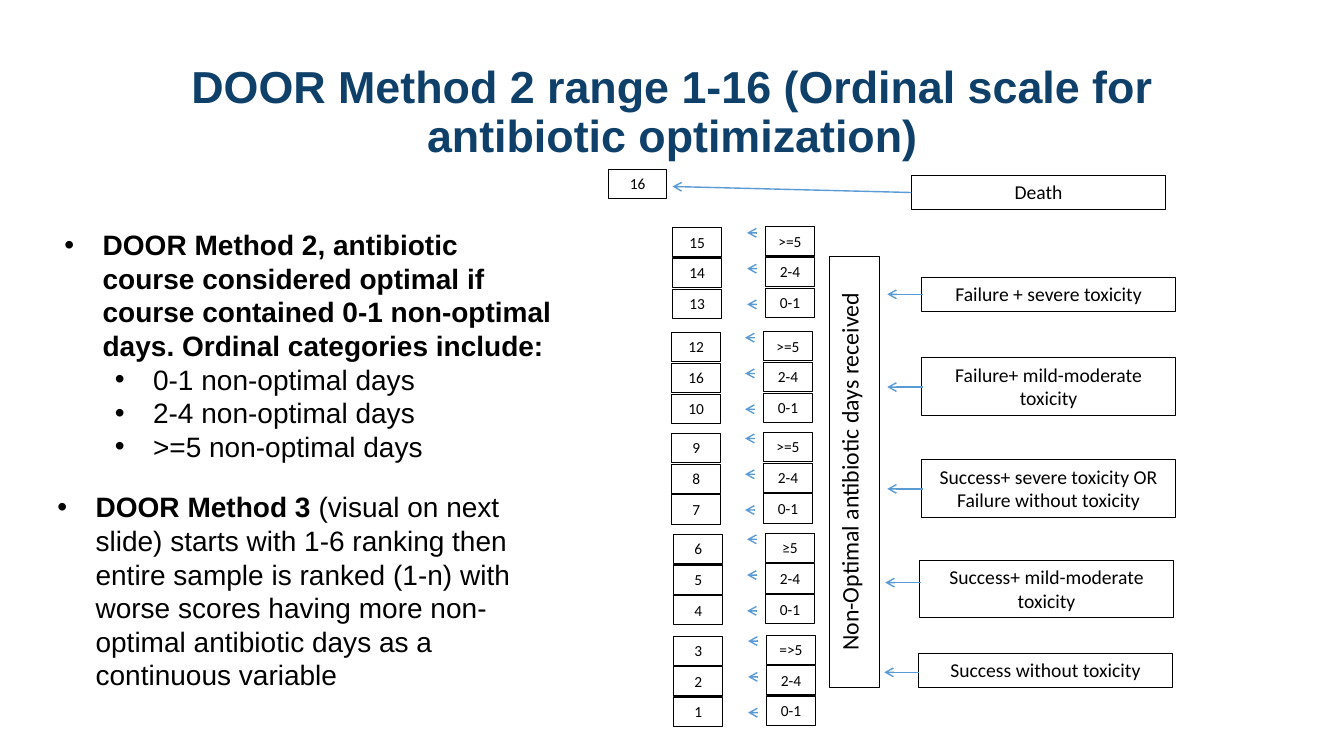
from dataclasses import dataclass

import lxml.etree
import pptx
import pptx.dml.color
import pptx.enum.shapes
import pptx.enum.text
import pptx.oxml.ns
import pptx.shapes.autoshape
import pptx.slide
import pptx.text.text
import pptx.util

Inches = pptx.util.Inches
qn = pptx.oxml.ns.qn
RGB = pptx.dml.color.RGBColor.from_string
ALIGN = pptx.enum.text.PP_ALIGN
ANCHOR = pptx.enum.text.MSO_ANCHOR


@dataclass(frozen=True)
class Theme:
    title: str = "0F406A"
    ink: str = "000000"
    arrow: str = "5B9BD5"
    text_font: str = "Arial"
    box_font: str = "Calibri"
    title_size: int = 32
    body_size: int = 20
    axis_size: int = 17
    outcome_size: int = 14
    cell_size: int = 11


@dataclass(frozen=True)
class Outcome:
    text: str
    left: float
    top: float
    height: float
    arrow_y: float


@dataclass(frozen=True)
class RankGroup:
    """Three ranks, worst first, each beside its range of non-optimal days."""
    ranks: tuple[str, str, str]
    worst_days: str
    rank_left: float
    days_left: float
    top: float


@dataclass(frozen=True)
class Bullet:
    bold: str
    plain: str = ""
    level: int = 0


THEME = Theme()
CELL_W, CELL_H, CELL_STEP = 0.49, 0.29, 0.305
OUTCOME_W = 2.52

OUTCOMES = [
    Outcome("Failure + severe toxicity", 9.14, 2.75, 0.34, 2.92),
    Outcome("Failure+ mild-moderate toxicity", 9.14, 3.55, 0.57, 3.84),
    Outcome("Success+ severe toxicity OR\nFailure without toxicity", 9.14, 4.56, 0.57, 4.85),
    Outcome("Success+ mild-moderate toxicity", 9.12, 5.56, 0.57, 5.78),
    Outcome("Success without toxicity", 9.11, 6.48, 0.34, 6.67),
]
RANK_GROUPS = [
    RankGroup(("15", "14", "13"), ">=5", 6.67, 7.59, 2.25),
    RankGroup(("12", "16", "10"), ">=5", 6.66, 7.57, 3.29),
    RankGroup(("9", "8", "7"), ">=5", 6.66, 7.57, 4.29),
    RankGroup(("6", "5", "4"), "≥5", 6.68, 7.59, 5.29),
    RankGroup(("3", "2", "1"), "=>5", 6.68, 7.6, 6.3),
]
METHOD_2 = [
    Bullet("DOOR Method 2, antibiotic course considered optimal if course contained "
           "0-1 non-optimal days. Ordinal categories include:"),
    Bullet("", "0-1 non-optimal days", 1),
    Bullet("", "2-4 non-optimal days", 1),
    Bullet("", ">=5 non-optimal days", 1),
]
METHOD_3 = [
    Bullet("DOOR Method 3 ", "(visual on next slide) starts with 1-6 ranking then entire "
           "sample is ranked (1-n) with worse scores having more non-optimal antibiotic "
           "days as a continuous variable"),
]


def style(font: pptx.text.text.Font, name: str, size: int, color: str, bold: bool = False) -> None:
    font.name = name
    font.size = pptx.util.Pt(size)
    font.color.rgb = RGB(color)
    font.bold = bold


def add_box(s: pptx.slide.Slide, text: str, left: float, top: float, width: float,
            height: float, size: int, margin: float = 0.1) -> pptx.shapes.autoshape.Shape:
    sp = s.shapes.add_shape(pptx.enum.shapes.MSO_SHAPE.RECTANGLE, Inches(left), Inches(top),
                            Inches(width), Inches(height))
    sp.shadow.inherit = False
    sp.fill.background()
    sp.line.color.rgb = RGB(THEME.ink)
    sp.line.width = pptx.util.Pt(0.75)
    tf = sp.text_frame
    tf.word_wrap = True
    tf.vertical_anchor = ANCHOR.TOP
    tf.margin_left = tf.margin_right = Inches(margin)
    tf.text = text
    for p in tf.paragraphs:
        p.alignment = ALIGN.CENTER
        for r in p.runs:
            style(r.font, THEME.box_font, size, THEME.ink)
    return sp


def add_cell(s: pptx.slide.Slide, text: str, left: float, top: float,
             width: float = CELL_W) -> None:
    add_box(s, text, left, top, width, CELL_H, THEME.cell_size, 0.05)


def add_arrow(s: pptx.slide.Slide, x1: float, y1: float, x2: float, y2: float) -> None:
    c = s.shapes.add_connector(pptx.enum.shapes.MSO_CONNECTOR.STRAIGHT,
                               Inches(x1), Inches(y1), Inches(x2), Inches(y2))
    c.line.color.rgb = RGB(THEME.arrow)
    c.line.width = pptx.util.Pt(1)
    lxml.etree.SubElement(c.line._get_or_add_ln(), qn("a:tailEnd"), type="arrow")
    lxml.etree.SubElement(c._element.spPr, qn("a:effectLst"))


def add_title(s: pptx.slide.Slide, text: str) -> None:
    tf = s.shapes.add_textbox(Inches(0.92), Inches(0.4), Inches(11.5), Inches(1.45)).text_frame
    tf.word_wrap = True
    tf.vertical_anchor = ANCHOR.MIDDLE
    tf.text = text
    p = tf.paragraphs[0]
    p.alignment = ALIGN.CENTER
    p.line_spacing = 0.9
    style(p.runs[0].font, THEME.text_font, THEME.title_size, THEME.title, True)


def add_bullets(s: pptx.slide.Slide, bullets: list[Bullet], left: float, top: float,
                height: float) -> None:
    tf = s.shapes.add_textbox(Inches(left), Inches(top), Inches(5.03), Inches(height)).text_frame
    tf.word_wrap = True
    tf.margin_right = Inches(0.05)
    for i, bullet in enumerate(bullets):
        p = tf.add_paragraph() if i else tf.paragraphs[0]
        p.level = bullet.level
        pPr = p._p.get_or_add_pPr()
        pPr.set("marL", str(Inches(0.38 + 0.5 * bullet.level)))
        pPr.set("indent", str(Inches(-0.38)))
        lxml.etree.SubElement(pPr, qn("a:buFont"), typeface=THEME.text_font)
        lxml.etree.SubElement(pPr, qn("a:buChar"), char="•")
        for text, bold in ((bullet.bold, True), (bullet.plain, False)):
            if text:
                r = p.add_run()
                r.text = text
                style(r.font, THEME.text_font, THEME.body_size, THEME.ink, bold)


def add_rank_group(s: pptx.slide.Slide, group: RankGroup) -> None:
    for i, (rank, days) in enumerate(zip(group.ranks, (group.worst_days, "2-4", "0-1"))):
        top = group.top + i * CELL_STEP
        add_cell(s, rank, group.rank_left, top + 0.01)
        add_cell(s, days, group.days_left, top)
        x, y = group.days_left - 0.08, group.top + 0.06 + i * 0.355
        add_arrow(s, x, y, x - 0.1, y)


def main() -> None:
    prs = pptx.Presentation()
    prs.slide_width, prs.slide_height = Inches(13.33), Inches(7.5)
    s = prs.slides.add_slide(prs.slide_layouts[6])

    add_title(s, "DOOR Method 2 range 1-16 (Ordinal scale for antibiotic optimization)")

    add_box(s, "Death", 9.04, 1.74, OUTCOME_W, 0.34, THEME.outcome_size)
    add_cell(s, "16", 6.04, 1.68, 0.57)
    add_arrow(s, 9.04, 1.91, 6.67, 1.85)
    for o in OUTCOMES:
        add_box(s, o.text, o.left, o.top, OUTCOME_W, o.height, THEME.outcome_size)
        add_arrow(s, o.left + 0.01, o.arrow_y, o.left - 0.34, o.arrow_y)

    axis = add_box(s, "Non-Optimal antibiotic days received", 8.23, 2.54, 0.49, 4.28,
                   THEME.axis_size)
    axis.text_frame._txBody.bodyPr.set("vert", "vert270")
    for group in RANK_GROUPS:
        add_rank_group(s, group)

    add_bullets(s, METHOD_2, 0.54, 2.21, 2.46)
    add_bullets(s, METHOD_3, 0.47, 4.81, 2.12)
    prs.save("out.pptx")


if __name__ == "__main__":
    main()
